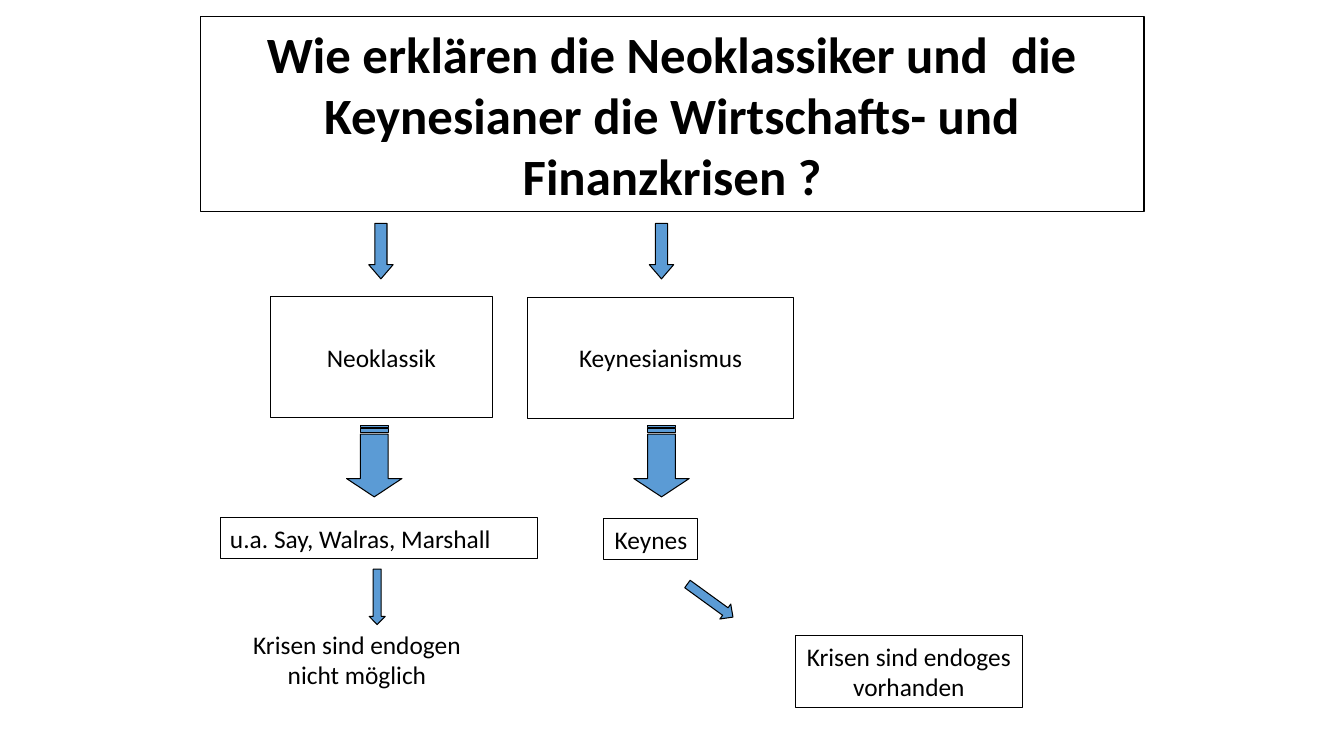
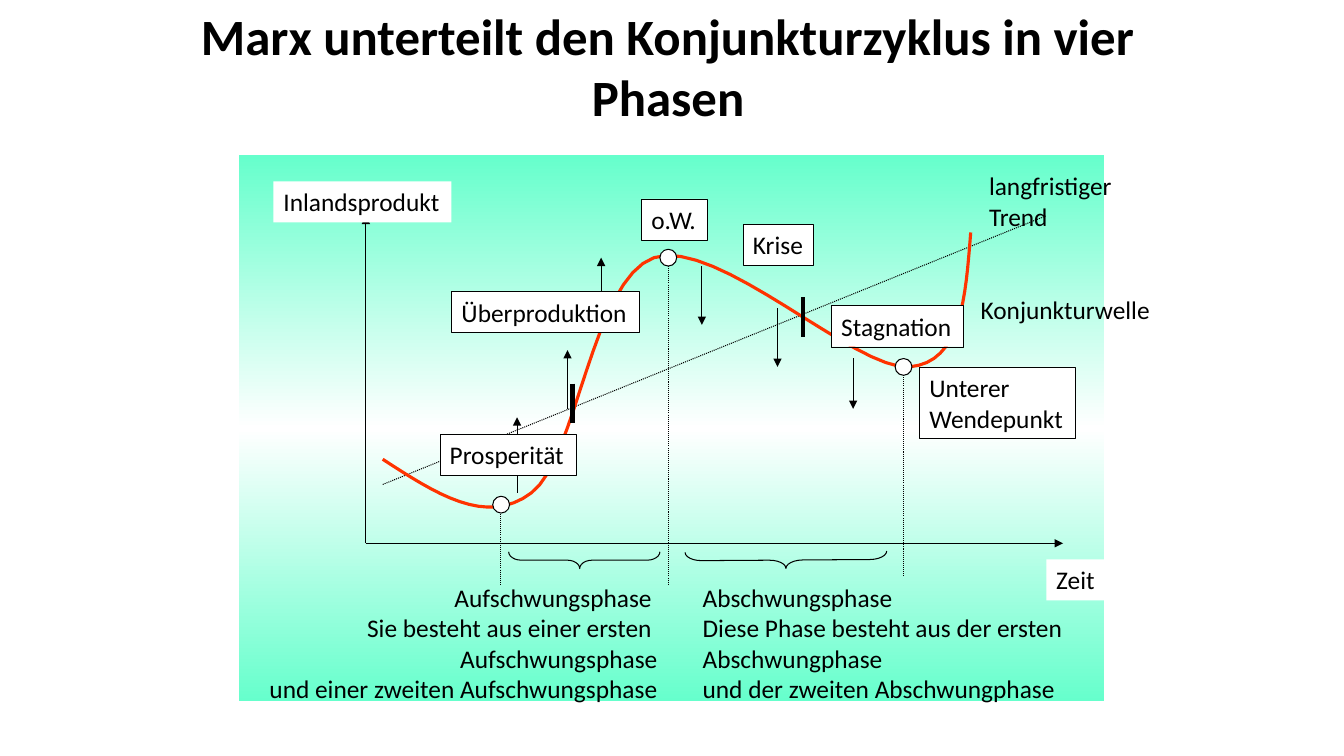
from copy import deepcopy

from lxml.etree import SubElement
from pptx import Presentation
from pptx.dml.color import RGBColor
from pptx.enum.dml import MSO_LINE
from pptx.enum.shapes import MSO_CONNECTOR, MSO_SHAPE
from pptx.enum.text import MSO_ANCHOR, PP_ALIGN
from pptx.oxml.ns import qn
from pptx.util import Inches, Pt

# Shared style
FONT = "Calibri"
BODY, HEAD = 18.1, 36.3
BLACK, WHITE, BLUE, MINT, RED = "000000", "FFFFFF", "5B9BD5", "66FFCC", "FF3300"
THIN, HAIR = 0.75, 0.25
LEFT, CENTER, RIGHT = PP_ALIGN.LEFT, PP_ALIGN.CENTER, PP_ALIGN.RIGHT

# Slide grid: 160 columns by 90 rows
COLS, ROWS = 160, 90
LINE1, LINE2, LINE4 = 4.9, 8.5, 15.8  # rows taken by 1, 2 and 4 lines of text


def color(hex_code):
    return RGBColor.from_string(hex_code)


def write(sp, text, size=BODY, bold=False, align=LEFT, wrap=False,
          anchor=MSO_ANCHOR.MIDDLE):
    """Put one paragraph per line of text into the shape."""
    tf = sp.text_frame
    tf.word_wrap = wrap
    tf.vertical_anchor = anchor
    for i, line in enumerate(text.split("\n")):
        p = tf.add_paragraph() if i else tf.paragraphs[0]
        p.alignment = align
        r = p.add_run()
        r.text = line
        r.font.name, r.font.size, r.font.bold = FONT, Pt(size), bold
        r.font.color.rgb = color(BLACK)


def bezier(points, steps=16):
    """Sample a chain of cubic curves that share their end points."""
    result = [points[0]]
    for i in range(0, len(points) - 1, 3):
        for n in range(1, steps + 1):
            t = n / steps
            weights = ((1 - t) ** 3, 3 * t * (1 - t) ** 2, 3 * t * t * (1 - t), t ** 3)
            result.append(tuple(sum(w * pt[k] for w, pt in zip(weights, points[i:i + 4]))
                                for k in (0, 1)))
    return result


class Deck:
    def __init__(self):
        self.prs = Presentation()
        self.prs.slide_width, self.prs.slide_height = Inches(13.33), Inches(7.5)
        self.col = self.prs.slide_width / COLS
        self.row = self.prs.slide_height / ROWS

    def slide(self):
        self.s = self.prs.slides.add_slide(self.prs.slide_layouts[6])
        self.origin(0, 0)

    def origin(self, x, y):
        """Set the grid point from which places are counted."""
        self.x0, self.y0 = x, y

    def point(self, x, y):
        return round((self.x0 + x) * self.col), round((self.y0 + y) * self.row)

    def frame(self, x, y, w, h):
        return *self.point(x, y), round(w * self.col), round(h * self.row)

    def shape(self, kind, x, y, w, h, fill=None, line=THIN, rot=0, adj=()):
        sp = self.s.shapes.add_shape(kind, *self.frame(x, y, w, h))
        sp.rotation = rot
        for i, value in enumerate(adj):
            sp.adjustments[i] = value
        self.paint(sp, fill, line)
        return sp

    def paint(self, sp, fill, line, line_color=BLACK):
        sp.shadow.inherit = False
        if fill:
            sp.fill.solid()
            sp.fill.fore_color.rgb = color(fill)
        else:
            sp.fill.background()
        if line:
            sp.line.width = Pt(line)
            sp.line.color.rgb = color(line_color)
        else:
            sp.line.fill.background()

    def box(self, text, x, y, w, h=LINE1, fill=None, line=THIN, **fmt):
        sp = self.shape(MSO_SHAPE.RECTANGLE, x, y, w, h, fill, line)
        write(sp, text, **fmt)

    def text(self, text, x, y, w, h=LINE1, **fmt):
        sp = self.s.shapes.add_textbox(*self.frame(x, y, w, h))
        write(sp, text, anchor=MSO_ANCHOR.TOP, **fmt)

    def gradient(self, x, y, w, h, colors):
        sp = self.shape(MSO_SHAPE.RECTANGLE, x, y, w, h, line=None)
        sp.fill.gradient()
        sp.fill.gradient_angle = 90
        stops = sp.element.spPr.find(qn("a:gradFill")).find(qn("a:gsLst"))
        stops.insert(1, deepcopy(stops[0]))
        for i, (stop, c) in enumerate(zip(sp.fill.gradient_stops, colors)):
            stop.position = i / (len(colors) - 1)
            stop.color.rgb = color(c)

    def line(self, x1, y1, x2, y2, width=THIN, arrow=False, dotted=False):
        c = self.s.shapes.add_connector(
            MSO_CONNECTOR.STRAIGHT, *self.point(x1, y1), *self.point(x2, y2))
        c.line.width = Pt(width)
        c.line.color.rgb = color(BLACK)
        if dotted:
            c.line.dash_style = MSO_LINE.ROUND_DOT
        if arrow:
            SubElement(c.line._get_or_add_ln(), qn("a:tailEnd"), type="triangle")
        SubElement(c._element.spPr, qn("a:effectLst"))

    def curve(self, points, width, line_color):
        start, *rest = [self.point(*pt) for pt in bezier(points)]
        builder = self.s.shapes.build_freeform(*start)
        builder.add_line_segments(rest, close=False)
        self.paint(builder.convert_to_shape(), None, width, line_color)

    def dot(self, x, y, size=2):
        self.shape(MSO_SHAPE.OVAL, x - size / 2, y - size / 2, size, size, WHITE)

    def brace(self, kind, x, y, span, rot, adj, depth=2):
        self.shape(kind, x - depth / 2, y - span / 2, depth, span, rot=rot, adj=adj)


def schools(d):
    d.slide()
    d.box("Wie erklären die Neoklassiker und  die Keynesianer die Wirtschafts- und "
          "Finanzkrisen ?", 23.9, 2, 112.3, 23.2,
          size=HEAD, bold=True, align=CENTER, wrap=True)

    # Arrows down both branches
    for x_thin, x_striped in ((43.9, 40.3), (77.3, 74.5)):
        d.shape(MSO_SHAPE.DOWN_ARROW, x_thin, 26.6, 2.9, 6.6, BLUE, adj=(0.5, 0.58))
        d.shape(MSO_SHAPE.STRIPED_RIGHT_ARROW, x_striped, 51.6, 8.5, 6.6, BLUE,
                rot=90, adj=(0.5, 0.33))

    # Schools and their authors
    d.box("Neoklassik", 32.2, 35.3, 26.4, 14.4, align=CENTER)
    d.box("Keynesianismus", 62.8, 35.4, 31.7, 14.4, align=CENTER)
    d.box("u.a. Say, Walras, Marshall", 26.2, 61.6, 37.8, wrap=True)
    d.box("Keynes", 71.9, 61.7, 11.2, align=CENTER)

    # Conclusions
    for x, y, w, h, rot in ((41.6, 70.1, 6.6, 1.9, 90), (81.2, 70.4, 6.7, 2.2, 36)):
        d.shape(MSO_SHAPE.RIGHT_ARROW, x, y, w, h, BLUE, rot=rot, adj=(0.5, 0.51))
    d.text("Krisen sind endogen\nnicht möglich", 28.9, 74.3, 27.2, LINE2, align=CENTER)
    d.box("Krisen sind endoges\nvorhanden", 94.7, 75.7, 27, LINE2, align=CENTER)


def cycle(d):
    d.slide()
    d.text("Marx unterteilt den Konjunkturzyklus in vier Phasen", 21.7, 0, 115.7, 15.8,
           size=HEAD, bold=True, align=CENTER, wrap=True)

    # Diagram, counted from the crossing of its axes
    d.origin(43.56, 64.68)
    d.gradient(-15.1, -46.2, 103, 65, (MINT, WHITE, MINT))
    d.line(0, 0, 0, -39, arrow=True)
    d.line(0, 0, 83, 0, arrow=True)
    d.line(2, -7, 81, -39, dotted=True)
    d.curve([(2, -10), (8.2, -6), (14.3, -1.9), (19.7, -6),
             (25.1, -10), (26.9, -31.4), (34.3, -34),
             (41.8, -36.5), (58.3, -20.5), (64.7, -21),
             (70.9, -21.5), (71.4, -29.3), (72, -37)], 2.25, RED)
    d.box("Inlandsprodukt", -11, -43.1, 21.2, fill=WHITE, line=None)
    d.box("Zeit", 81, 1.9, 7.1, fill=WHITE, line=None)

    # Turning points and direction arrows
    for x, top, bottom in ((16, -4, 5), (36, -34, 5), (64, -21, 4)):
        d.line(x, top, x, bottom, dotted=True)
    for x, start, end in ((18, -6, -15), (24, -16, -23), (28, -27, -34),
                          (40, -33, -26), (49, -28, -21), (58, -22, -16)):
        d.line(x, start, x, end, arrow=True)

    # Phase labels
    for text, x, y, w, h in (("Prosperität", 8.8, -13, 16.2, LINE1),
                             ("Überproduktion", 10.2, -30, 22.3, LINE1),
                             ("o.W.", 32.8, -41, 7.8, LINE1),
                             ("Krise", 44.9, -38, 8.4, LINE1),
                             ("Stagnation", 55.4, -28.3, 15.7, LINE1),
                             ("Unterer\nWendepunkt", 65.9, -21, 18.5, LINE2)):
        d.box(text, x, y, w, h, WHITE, HAIR)
    for x, y in ((16.1, -4.6), (36, -34), (64, -21)):
        d.dot(x, y)

    # Curve names and explanations
    d.text("langfristiger\nTrend", 73, -45, 17.2, LINE2)
    d.text("Konjunkturwelle", 72, -30.2, 22.8)
    d.text("Aufschwungsphase \nSie besteht aus einer ersten \nAufschwungsphase\n"
           "und einer zweiten Aufschwungsphase", -13.9, 4, 49.8, LINE4, align=RIGHT)
    d.text("Abschwungsphase\nDiese Phase besteht aus der ersten\nAbschwungphase\n"
           "und der zweiten Abschwungphase", 38.9, 4, 46.4, LINE4)

    # Braces and phase limits
    d.brace(MSO_SHAPE.LEFT_BRACE, 26, 2, 18, 270, (0.75, 0.47))
    d.brace(MSO_SHAPE.RIGHT_BRACE, 50, 2, 24, 89.6, (1, 0.5))
    for x, top in ((24.6, -19), (52, -29.3)):
        d.line(x, top, x, top + 4.7, width=3)


def main():
    d = Deck()
    schools(d)
    cycle(d)
    d.prs.save("out.pptx")


if __name__ == "__main__":
    main()
